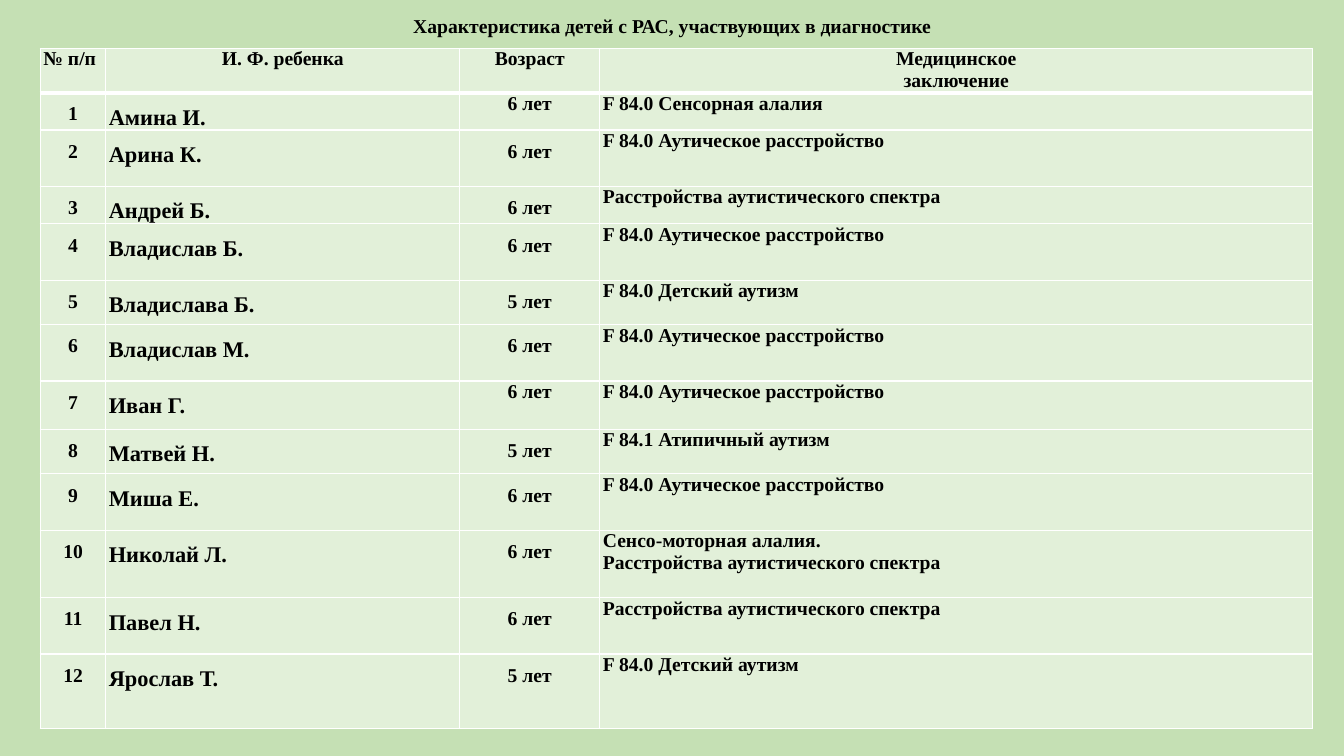
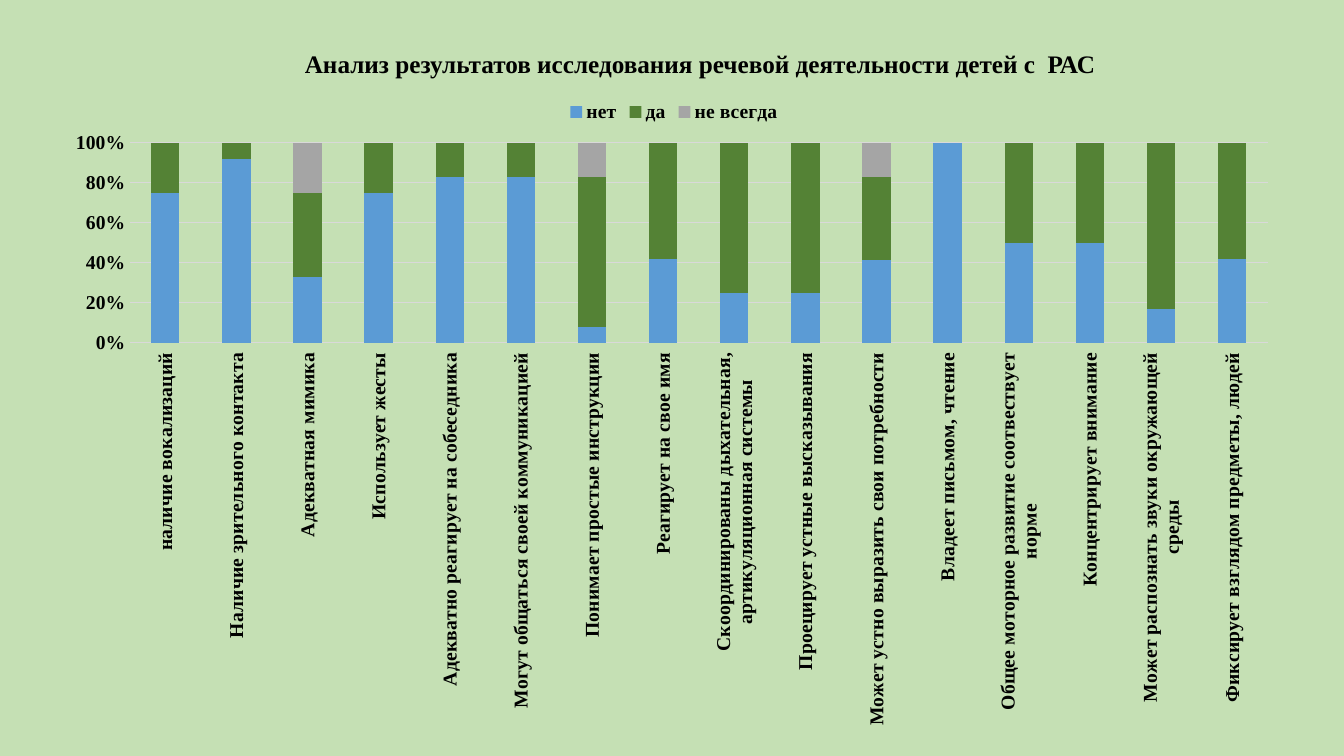
from dataclasses import dataclass
from itertools import product

from lxml import etree
from pptx import Presentation
from pptx import util as u
from pptx.chart import data as chart_data
from pptx.dml.color import RGBColor
from pptx.enum import chart as chart_enum
from pptx.enum import text
from pptx.oxml import ns

BACKGROUND = RGBColor(0xC5, 0xE0, 0xB4)
CELL_FILL = RGBColor(0xE2, 0xF0, 0xD9)
WHITE = RGBColor(0xFF, 0xFF, 0xFF)
BLACK = RGBColor(0x00, 0x00, 0x00)
GRID = RGBColor(0xD9, 0xD9, 0xD9)
BLUE = RGBColor(0x5B, 0x9B, 0xD5)
GREEN = RGBColor(0x54, 0x82, 0x35)
GREY = RGBColor(0xA5, 0xA5, 0xA5)
FONT_NAME = "Times New Roman"
BODY_SIZE = 14
LEFT, CENTER = text.PP_ALIGN.LEFT, text.PP_ALIGN.CENTER


@dataclass(frozen=True)
class Box:
    left: float
    top: float
    width: float
    height: float

    def lengths(self) -> list[u.Length]:
        return [u.Inches(value) for value in (self.left, self.top, self.width, self.height)]


@dataclass(frozen=True)
class Child:
    name: str
    age: str
    diagnosis: str
    row_height: float
    age_spacing: float = 1.5


@dataclass(frozen=True)
class CellText:
    content: str
    alignment: text.PP_ALIGN = LEFT
    size: int = BODY_SIZE
    spacing: float = 1.0


@dataclass(frozen=True)
class Answer:
    name: str
    color: RGBColor
    values: tuple


AUTISTIC_DISORDER = "F 84.0 Аутическое расстройство"
CHILD_AUTISM = "F 84.0 Детский аутизм"
SPECTRUM = "Расстройства аутистического спектра"

CHILDREN = [
    Child("Амина И.", "6 лет", "F 84.0 Сенсорная алалия", 0.33, age_spacing=1.0),
    Child("Арина К.", "6 лет", AUTISTIC_DISORDER, 0.56),
    Child("Андрей Б.", "6 лет", SPECTRUM, 0.33),
    Child("Владислав Б.", "6 лет", AUTISTIC_DISORDER, 0.56),
    Child("Владислава Б.", "5 лет", CHILD_AUTISM, 0.44),
    Child("Владислав М.", "6 лет", AUTISTIC_DISORDER, 0.56),
    Child("Иван Г.", "6 лет", AUTISTIC_DISORDER, 0.48, age_spacing=1.0),
    Child("Матвей Н.", "5 лет", "F 84.1 Атипичный аутизм", 0.44),
    Child("Миша Е.", "6 лет", AUTISTIC_DISORDER, 0.56),
    Child("Николай Л.", "6 лет", f"Сенсо-моторная алалия.\n{SPECTRUM}", 0.67),
    Child("Павел Н.", "6 лет", SPECTRUM, 0.56),
    Child("Ярослав Т.", "5 лет", CHILD_AUTISM, 0.74),
]
HEADER = [
    CellText("№ п/п"),
    CellText("И. Ф. ребенка", CENTER),
    CellText("Возраст", CENTER),
    CellText("Медицинское\nзаключение", CENTER),
]
HEADER_HEIGHT = 0.44
COLUMN_WIDTHS = [0.65, 3.51, 1.39, 7.07]

# Rotated labels do not wrap by themselves, so the longest ones carry a line break.
SKILLS = [
    "наличие вокализаций",
    "Наличие зрительного контакта",
    "Адекватная мимика",
    "Использует жесты",
    "Адекватно реагирует на собеседника",
    "Могут общаться своей коммуникацией",
    "Понимает простые инструкции",
    "Реагирует на свое имя",
    "Скоординированы дыхательная,\nартикуляционная системы",
    "Проецирует устные высказывания",
    "Может устно выразить свои потребности",
    "Владеет письмом, чтение",
    "Общее моторное развитие соотвествует\nнорме",
    "Концентрирует внимание",
    "Может распознать звуки окружающей\nсреды",
    "Фиксирует взглядом предметы, людей",
]
ANSWERS = [
    Answer("нет", BLUE, (75, 92, 33, 75, 83, 83, 8, 42, 25, 25, 42, 100, 50, 50, 17, 42)),
    Answer("да", GREEN, (25, 8, 42, 25, 17, 17, 75, 58, 75, 75, 42, None, 50, 50, 83, 58)),
    Answer("не всегда", GREY, (0, 0, 25, 0, 0, None, 17, None, None, None, 17) + (None,) * 5),
]


def style_font(font, size: float = BODY_SIZE) -> None:
    font.name = FONT_NAME
    font.size = u.Pt(size)
    font.bold = True
    font.color.rgb = BLACK


def add_titled_slide(presentation, title: str, box: Box, size: float, spacing: float):
    slide = presentation.slides.add_slide(presentation.slide_layouts.get_by_name("Title Only"))
    shape = slide.shapes.title
    shape.left, shape.top, shape.width, shape.height = box.lengths()
    frame = shape.text_frame
    frame.text = title
    frame.auto_size = text.MSO_AUTO_SIZE.NONE
    frame.vertical_anchor = text.MSO_ANCHOR.MIDDLE
    paragraph = frame.paragraphs[0]
    paragraph.alignment = CENTER
    paragraph.line_spacing = spacing
    style_font(paragraph.font, size)
    return slide


def set_borders(cell, top: float = 1, bottom: float = 1) -> None:
    """Draw white borders; widths are in points. Call before filling the cell."""
    properties = cell._tc.get_or_add_tcPr()
    for side, width in (("L", 1), ("R", 1), ("T", top), ("B", bottom)):
        line = etree.SubElement(properties, ns.qn(f"a:ln{side}"), w=str(u.Pt(width)))
        fill = etree.SubElement(line, ns.qn("a:solidFill"))
        etree.SubElement(fill, ns.qn("a:srgbClr"), val=str(WHITE))


def fill_cell(cell, cell_text: CellText) -> None:
    cell.fill.solid()
    cell.fill.fore_color.rgb = CELL_FILL
    cell.margin_left = cell.margin_right = u.Inches(0.03)
    cell.margin_top = cell.margin_bottom = 0
    cell.text_frame.text = cell_text.content
    for paragraph in cell.text_frame.paragraphs:
        paragraph.alignment = cell_text.alignment
        paragraph.line_spacing = cell_text.spacing
        style_font(paragraph.font, cell_text.size)


def child_cells(number: int, child: Child) -> list[CellText]:
    return [
        CellText(str(number), CENTER, spacing=1.5),
        CellText(child.name, size=16, spacing=1.5),
        CellText(child.age, CENTER, spacing=child.age_spacing),
        CellText(child.diagnosis),
    ]


def add_children_table(slide, box: Box) -> None:
    rows = [HEADER] + [child_cells(number, child) for number, child in enumerate(CHILDREN, 1)]
    heights = [HEADER_HEIGHT] + [child.row_height for child in CHILDREN]
    table = slide.shapes.add_table(len(rows), len(COLUMN_WIDTHS), *box.lengths()).table
    table.first_row = table.horz_banding = False
    for column, width in zip(table.columns, COLUMN_WIDTHS):
        column.width = u.Inches(width)
    for row, height in zip(table.rows, heights):
        row.height = u.Inches(height)
    for row, column in product(range(len(rows)), range(len(COLUMN_WIDTHS))):
        cell = table.cell(row, column)
        set_borders(cell, top=3 if row == 1 else 1, bottom=3 if row == 0 else 1)
        fill_cell(cell, rows[row][column])


def style_line(line, color: RGBColor) -> None:
    line.color.rgb = color
    line.width = u.Pt(0.75)


def set_plot_layout(chart, box: Box) -> None:
    """Place the inner plot area; the box holds fractions of the chart."""
    plot_area = chart._chartSpace.chart.plotArea
    for old_layout in plot_area.findall(ns.qn("c:layout")):
        plot_area.remove(old_layout)
    layout = etree.Element(ns.qn("c:layout"))
    plot_area.insert(0, layout)
    manual = etree.SubElement(layout, ns.qn("c:manualLayout"))
    settings = {
        "layoutTarget": "inner", "xMode": "edge", "yMode": "edge",
        "x": box.left, "y": box.top, "w": box.width, "h": box.height,
    }
    for tag, value in settings.items():
        etree.SubElement(manual, ns.qn(f"c:{tag}"), val=str(value))


def style_axes(chart) -> None:
    for axis in (chart.category_axis, chart.value_axis):
        axis.major_tick_mark = axis.minor_tick_mark = chart_enum.XL_TICK_MARK.NONE
        style_font(axis.tick_labels.font)
    category_axis, value_axis = chart.category_axis, chart.value_axis
    category_axis.tick_label_position = chart_enum.XL_TICK_LABEL_POSITION.LOW
    style_line(category_axis.format.line, GRID)
    category_axis._element.get_or_add_txPr().bodyPr.set("rot", "-5400000")
    value_axis.format.line.fill.background()
    style_line(value_axis.major_gridlines.format.line, GRID)
    value_axis.tick_labels.number_format = "0%"
    value_axis.tick_labels.number_format_is_linked = False


def add_skills_chart(slide, box: Box) -> None:
    data = chart_data.CategoryChartData()
    data.categories = SKILLS
    for answer in ANSWERS:
        data.add_series(answer.name, answer.values)
    chart = slide.shapes.add_chart(
        chart_enum.XL_CHART_TYPE.COLUMN_STACKED_100, *box.lengths(), data
    ).chart
    style_font(chart.font)
    chart.has_title = False
    chart.has_legend = True
    chart.legend.position = chart_enum.XL_LEGEND_POSITION.TOP
    chart.legend.include_in_layout = False
    style_font(chart.legend.font)
    plot = chart.plots[0]
    plot.gap_width, plot.overlap = 150, 100
    plot.vary_by_categories = False
    for series, answer in zip(plot.series, ANSWERS):
        series.format.fill.solid()
        series.format.fill.fore_color.rgb = answer.color
    style_axes(chart)
    set_plot_layout(chart, Box(0.06, 0.08, 0.92, 0.3))


def main() -> None:
    presentation = Presentation()
    presentation.slide_width, presentation.slide_height = u.Inches(13.33), u.Inches(7.5)
    background = presentation.slide_master.background.fill
    background.solid()
    background.fore_color.rgb = BACKGROUND

    children_slide = add_titled_slide(
        presentation, "Характеристика детей с РАС, участвующих в диагностике",
        Box(3.9, 0.08, 5.54, 0.34), size=14, spacing=1.0,
    )
    add_children_table(children_slide, Box(0.4, 0.48, 12.63, 6.75))

    skills_slide = add_titled_slide(
        presentation, "Анализ результатов исследования речевой деятельности детей с  РАС",
        Box(1.48, 0.4, 10.93, 0.49), size=18, spacing=0.9,
    )
    add_skills_chart(skills_slide, Box(0.55, 0.89, 12.27, 6.61))
    presentation.save("out.pptx")


if __name__ == "__main__":
    main()
